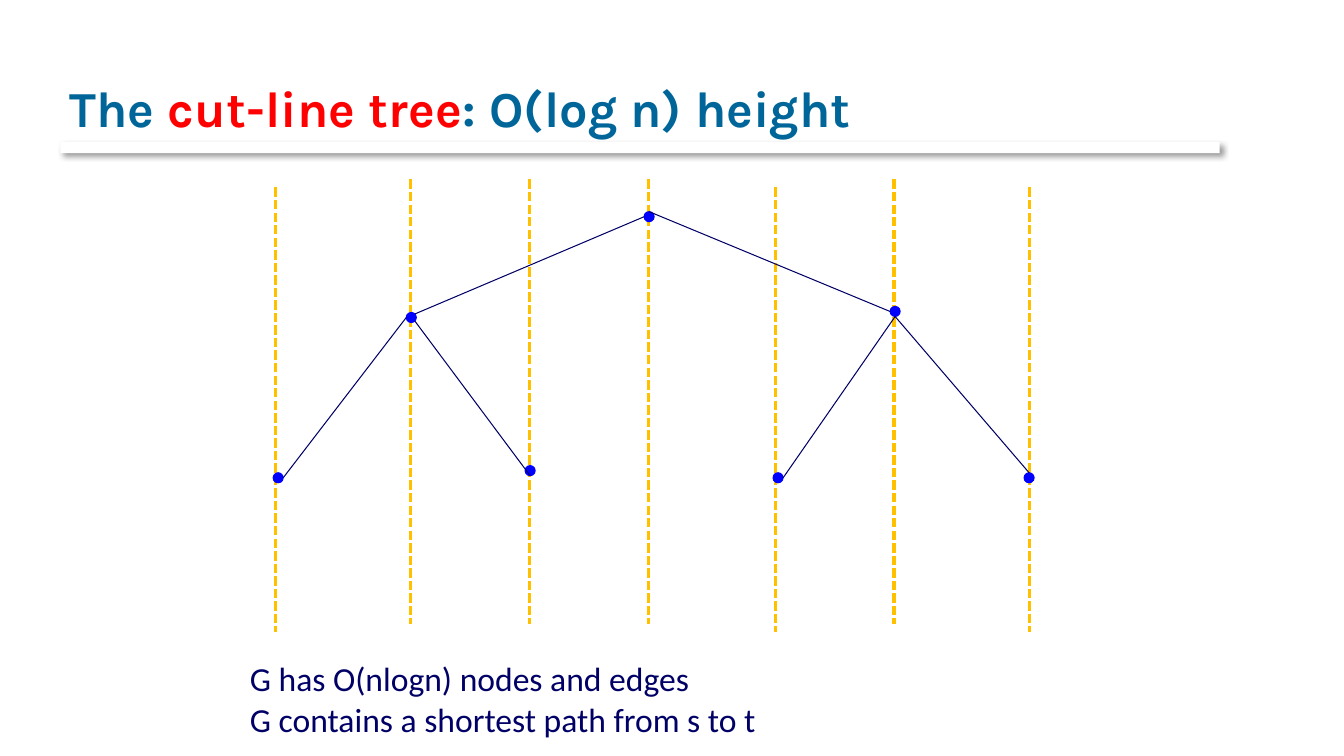
from lxml import etree
from pptx import Presentation
from pptx.dml.color import RGBColor as RGB
from pptx.enum.dml import MSO_LINE as Dash
from pptx.enum.shapes import MSO_CONNECTOR as Link, MSO_SHAPE as Kind
from pptx.enum.text import MSO_ANCHOR as Anchor, MSO_AUTO_SIZE as Fit, PP_ALIGN as Align
from pptx.oxml import parse_xml
from pptx.oxml.ns import nsdecls, qn
from pptx.util import Pt

# Content
TITLE = [("The ", "teal"), ("cut-line tree", "red"), (": O(log n) height", "teal")]
NOTES = ["G has O(nlogn) nodes and edges", "G contains a shortest path from s to t"]
HEX = {"teal": "006699", "red": "FF0000", "navy": "000066",
       "blue": "0000FF", "gold": "FFC000", "white": "FFFFFF"}
HIGH, LOW, SPAN = 128.2, 133.9, 317.5
CUTS = [(196.5, LOW), (293, HIGH), (378, HIGH), (463, HIGH),
        (553.7, LOW), (638.6, HIGH), (735.1, LOW)]
# Tree nodes: centre of each dot
NODES = {"root": (463.7, 154.8), "left": (293.8, 226.8), "right": (639.4, 222.5),
         "a": (198.7, 341.3), "b": (378.7, 336.2),
         "c": (555.8, 341.3), "d": (735.1, 341.3)}
# Tree edges: node and side of its dot, at both ends
EDGES = [("root", "W", "left", "NE"), ("root", "N", "right", "W"),
         ("right", "S", "c", "E"), ("right", "S", "d", "N"),
         ("left", "W", "a", "E"), ("left", "SE", "b", "S")]
SIDES = {"N": (0, -1), "S": (0, 1), "W": (-1, 0), "E": (1, 0),
         "NE": (0.7, -0.7), "SE": (0.7, 0.7)}
RAD = 3.6
SHADE = ('<a:effectLst %s><a:outerShdw blurRad="50800" dist="38100" dir="2700000" '
         'algn="tl" rotWithShape="0"><a:srgbClr val="000000"><a:alpha val="40000"/>'
         '</a:srgbClr></a:outerShdw></a:effectLst>' % nsdecls("a"))

deck = Presentation()
deck.slide_width, deck.slide_height = Pt(960), Pt(540)
slide = deck.slides.add_slide(deck.slide_layouts[5])
shapes = slide.shapes


def color(name):
    return RGB.from_string(HEX[name])


def assign(item, form):
    for key, val in form.items():
        setattr(item, key, val)


def add_run(para, text, tone, form):
    run = para.add_run()
    run.text = text
    assign(run.font, form)
    run.font.color.rgb = color(tone)
    return run


def add_line(start, end, tone, form):
    line = shapes.add_connector(Link.STRAIGHT, *map(Pt, (*start, *end)))
    line.line.color.rgb = color(tone)
    assign(line.line, form)
    etree.SubElement(line._element.spPr, qn("a:effectLst"))


def site(node, side):
    return [mid + RAD * step for mid, step in zip(NODES[node], SIDES[side])]


# Bar under the title
bar = shapes.add_shape(Kind.RECTANGLE, Pt(43.2), Pt(101.5), Pt(828), Pt(7.9))
bar.fill.solid()
bar.fill.fore_color.rgb = color("white")
bar.line.fill.background()
bar._element.spPr.append(parse_xml(SHADE))

# Cut lines
for x, top in CUTS:
    add_line((x, top), (x, top + SPAN), "gold",
             {"width": Pt(2.25), "dash_style": Dash.SQUARE_DOT})

# Title
head = shapes.title
assign(head, {"left": Pt(42.5), "top": Pt(12.2), "width": Pt(815.8), "height": Pt(90)})
assign(head.text_frame, {"vertical_anchor": Anchor.BOTTOM, "auto_size": Fit.NONE,
                         "word_wrap": True})
para = head.text_frame.paragraphs[0]
para.alignment = Align.LEFT
for text, tone in TITLE:
    run = add_run(para, text, tone, {"name": "Karla", "size": Pt(36), "bold": True})
    run.font._element.set("spc", "10")

# Tree dots
for x, y in NODES.values():
    dot = shapes.add_shape(Kind.OVAL, Pt(x - RAD), Pt(y - RAD), Pt(2 * RAD), Pt(2 * RAD))
    dot.shadow.inherit = False
    dot.fill.solid()
    dot.fill.fore_color.rgb = dot.line.color.rgb = color("blue")
    dot.line.width = Pt(0.75)

# Tree edges
for up, exit, down, entry in EDGES:
    add_line(site(up, exit), site(down, entry), "navy", {"width": Pt(0.75)})

# Notes below the tree
box = shapes.add_textbox(Pt(171.4), Pt(466.6), Pt(485.3), Pt(65.5)).text_frame
assign(box, {"word_wrap": True, "auto_size": Fit.SHAPE_TO_FIT_TEXT})
for i, text in enumerate(NOTES):
    para = box.add_paragraph() if i else box.paragraphs[0]
    add_run(para, text, "navy", {"name": "Calibri", "size": Pt(24)})

deck.save("out.pptx")
